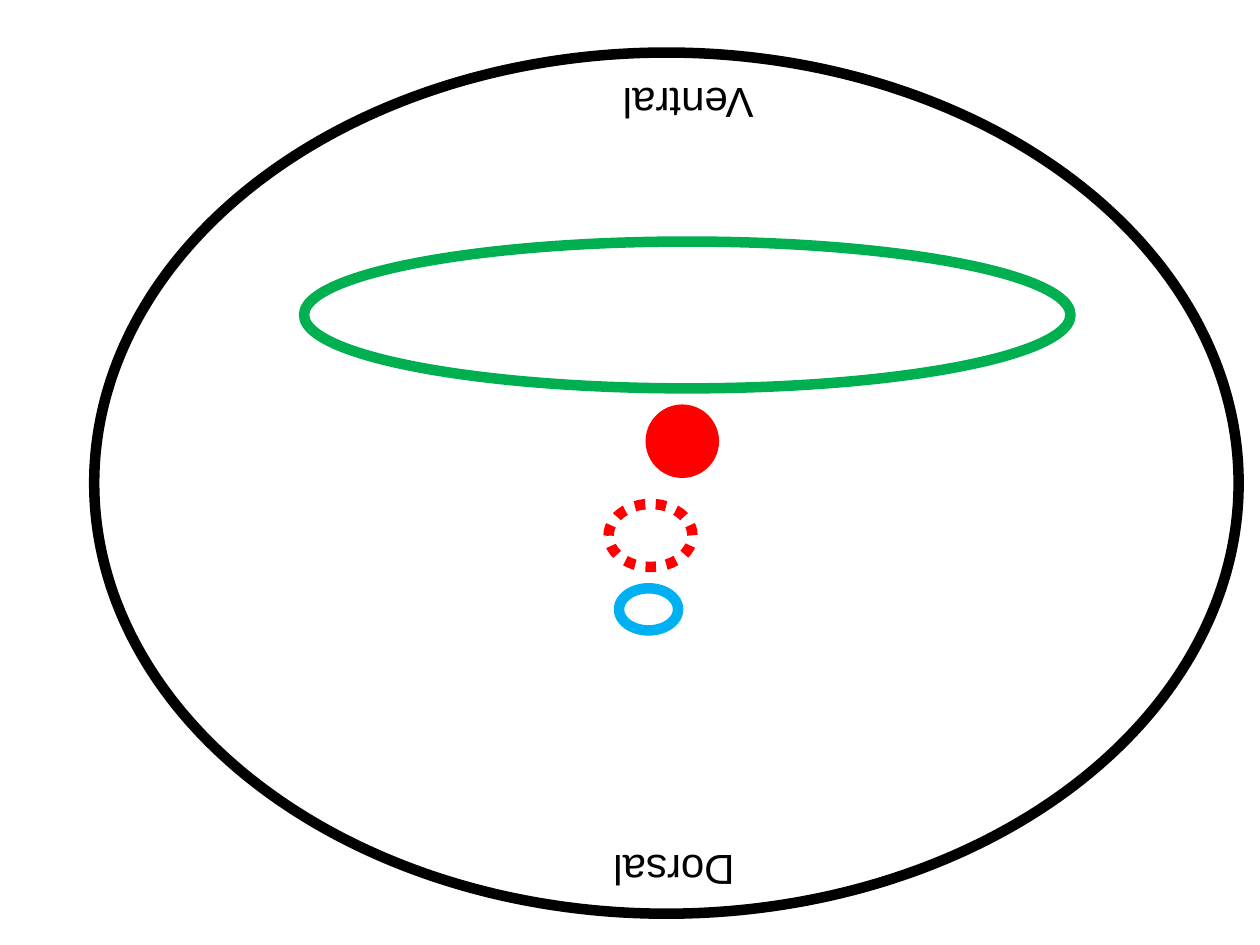
from pptx import Presentation
from pptx.dml.color import RGBColor
from pptx.enum import dml, shapes, text
from pptx.util import Cm, Pt

BLACK = RGBColor(0x00, 0x00, 0x00)
RED = RGBColor(0xFF, 0x00, 0x00)
GREEN = RGBColor(0x00, 0xB0, 0x50)
BLUE = RGBColor(0x00, 0xB0, 0xF0)

# Left, top, width, height in cm, relative to the body outline
ORGANS = [
    ((10.37, 9.1, 1.69, 1.27), RED, {"dash_style": dml.MSO_LINE.ROUND_DOT}, False),
    ((10.58, 10.8, 1.19, 0.85), BLUE, {}, False),
    ((11.22, 7.2, 1.27, 1.27), RED, {}, True),
    ((4.23, 3.81, 15.45, 2.96), GREEN, {}, False),
]
LABELS = [
    ("Dorsal", (10.16, 15.88, 3.0, 1.27)),
    ("Ventral", (10.37, 0.42, 3.17, 1.27)),
]
LABEL_FONT = {"name": "Arial", "size": Pt(24)}
FRAME_FORMAT = {"word_wrap": False, "auto_size": text.MSO_AUTO_SIZE.SHAPE_TO_FIT_TEXT}


def set_all(obj, values):
    for name, value in values.items():
        setattr(obj, name, value)


def place(box, part):
    """Return the slide position of a part given relative to its box."""
    left, top, width, height = part
    return Cm(box[0] + left), Cm(box[1] + top), Cm(width), Cm(height)


def add_ellipse(s, position, color, line_format, filled):
    sp = s.shapes.add_shape(shapes.MSO_SHAPE.OVAL, *position)
    sp.shadow.inherit = False
    if filled:
        sp.fill.solid()
        sp.fill.fore_color.rgb = color
    else:
        sp.fill.background()
    sp.line.color.rgb = color
    set_all(sp.line, {"width": Pt(6), **line_format})


def add_label(s, position, words):
    sp = s.shapes.add_textbox(*position)
    sp.rotation = 180
    tf = sp.text_frame
    set_all(tf, FRAME_FORMAT)
    r = tf.paragraphs[0].add_run()
    r.text = words
    set_all(r.font, LABEL_FONT)
    r.font.color.rgb = BLACK


def add_cross_section(s, box):
    """Draw the body section, turned so that ventral is at the top."""
    for part, color, line_format, filled in ORGANS:
        add_ellipse(s, place(box, part), color, line_format, filled)
    add_ellipse(s, place(box, (0, 0, box[2], box[3])), BLACK, {}, False)
    for words, part in LABELS:
        add_label(s, place(box, part), words)


def main():
    prs = Presentation()
    set_all(prs, {"slide_width": Cm(25.4), "slide_height": Cm(19.05)})
    s = prs.slides.add_slide(prs.slide_layouts[6])
    add_cross_section(s, (1.9, 1.06, 23.07, 17.36))
    prs.save("out.pptx")


if __name__ == "__main__":
    main()
